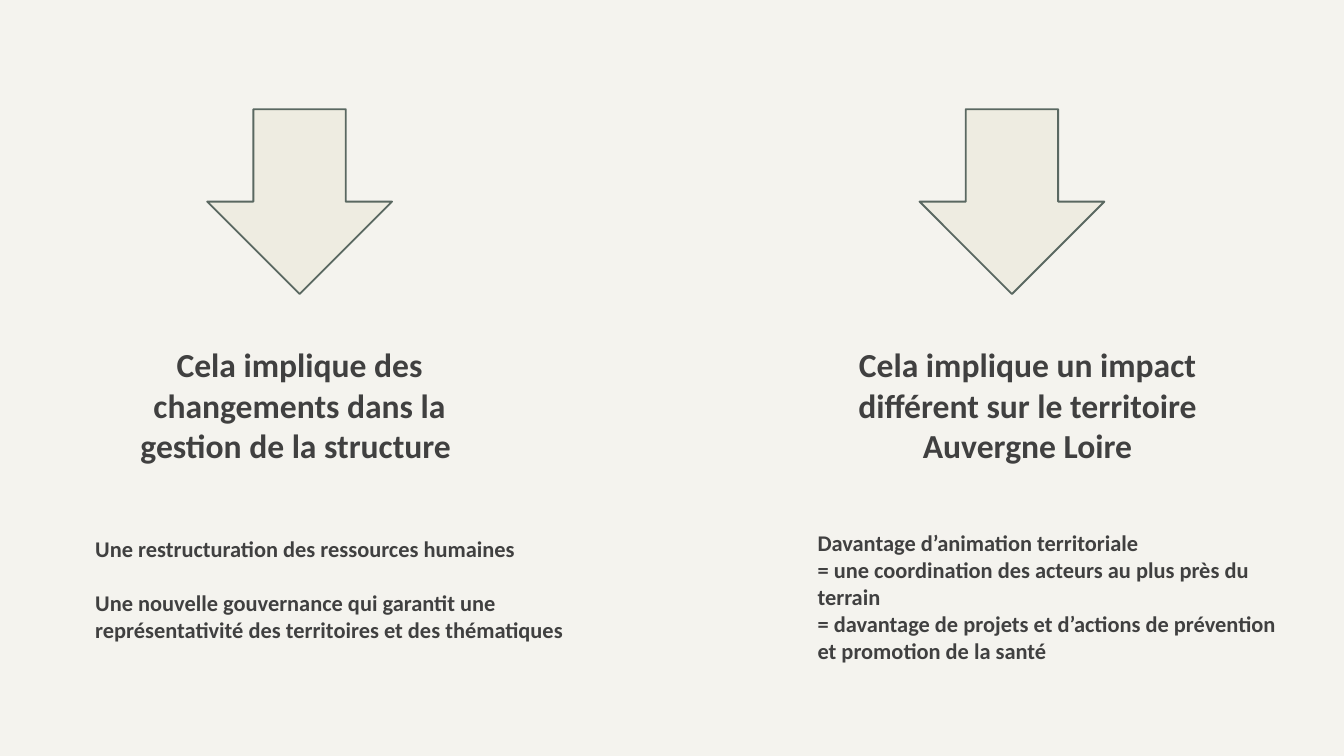
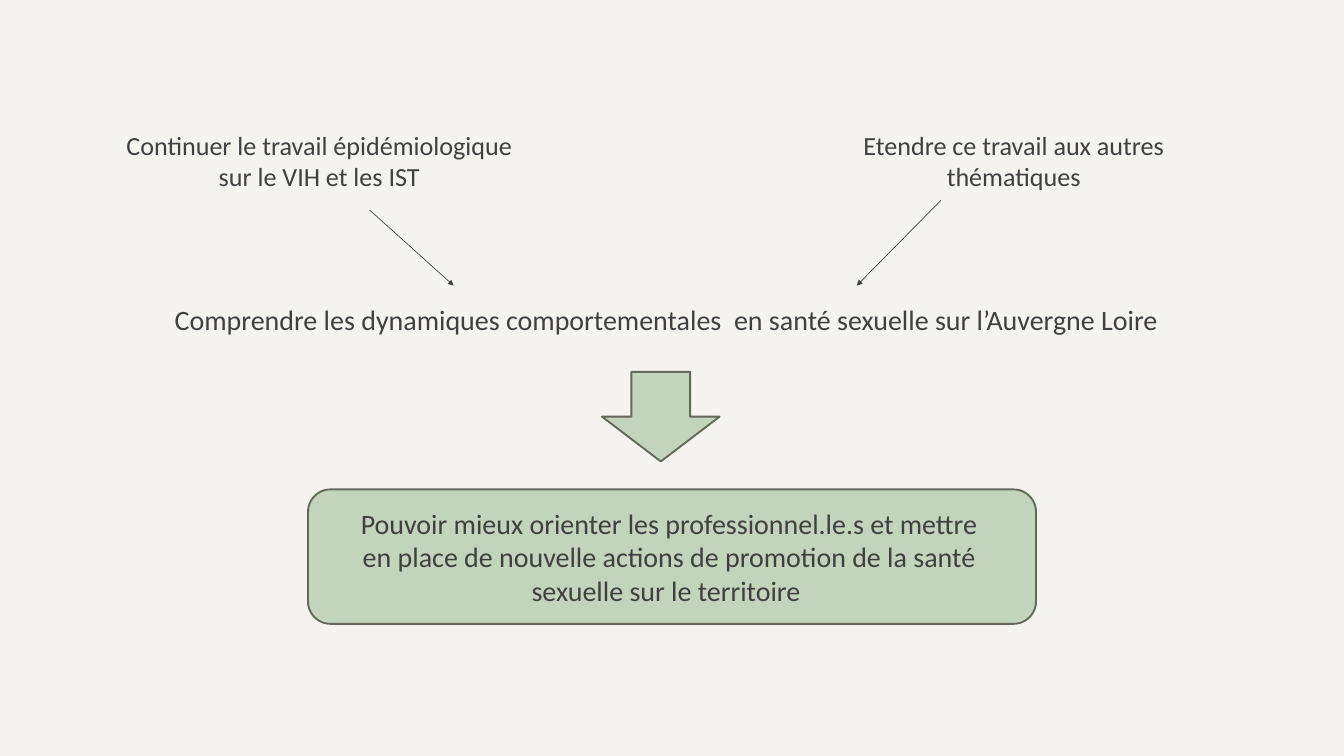
"""Build two slides on the consequences and aims of the work in Auvergne Loire."""
from lxml.etree import SubElement
from pptx import Presentation
from pptx.dml.color import RGBColor
from pptx.enum.shapes import MSO_CONNECTOR, MSO_SHAPE
from pptx.enum.text import MSO_ANCHOR, MSO_AUTO_SIZE, PP_ALIGN
from pptx.oxml.ns import qn
from pptx.util import Inches, Pt

PAPER = RGBColor(0xF4, 0xF3, 0xEE)
CREAM = RGBColor(0xEE, 0xEC, 0xE1)
SLATE = RGBColor(0x5A, 0x68, 0x61)
GREEN = RGBColor(0xC2, 0xD4, 0xBB)
OLIVE = RGBColor(0x64, 0x68, 0x5A)
INK = RGBColor(0x40, 0x40, 0x40)
FONT = "Calibri"

WIDTH, HEIGHT = Inches(20), Inches(11.25)
COLUMNS, ROWS = 240, 135
INSET = 1.2
INDENT = 6


def col(n):
    """Return the length of n grid columns."""
    return round(WIDTH * n / COLUMNS)


def row(n):
    """Return the length of n grid rows."""
    return round(HEIGHT * n / ROWS)


def grid_box(x, y, w, h):
    """Convert a box in columns and rows to slide lengths."""
    return col(x), row(y), col(w), row(h)


def add_block(slide, kind, box, fill, outline):
    """Add a filled preset shape with a two-point outline."""
    sp = slide.shapes.add_shape(kind, *grid_box(*box))
    sp.shadow.inherit = False
    sp.fill.solid()
    sp.fill.fore_color.rgb = fill
    sp.line.color.rgb = outline
    sp.line.width = Pt(2)


def add_text(slide, box, lines, size, bold=False, align=PP_ALIGN.CENTER,
             inset=INSET, indent=0, gap=0):
    """Add a text box with one paragraph per line and a gap between them."""
    tf = slide.shapes.add_textbox(*grid_box(*box)).text_frame
    tf.word_wrap = True
    tf.auto_size = MSO_AUTO_SIZE.SHAPE_TO_FIT_TEXT
    tf.vertical_anchor = MSO_ANCHOR.TOP
    tf.margin_left, tf.margin_right = col(inset + indent), col(inset)
    tf.margin_top = tf.margin_bottom = row(inset / 2)
    for i, line in enumerate(lines):
        p = tf.add_paragraph() if i else tf.paragraphs[0]
        p.alignment = align
        p.space_before = Pt(gap if i else 0)
        r = p.add_run()
        r.text = line
        r.font.name = FONT
        r.font.size = Pt(size)
        r.font.bold = bold
        r.font.color.rgb = INK


def add_arrow(slide, start, end):
    """Add a thin straight arrow between two grid points."""
    cx = slide.shapes.add_connector(
        MSO_CONNECTOR.STRAIGHT, col(start[0]), row(start[1]), col(end[0]), row(end[1]))
    cx.line.color.rgb = INK
    cx.line.width = Pt(0.75)
    SubElement(cx.line._get_or_add_ln(), qn("a:tailEnd"), type="triangle")
    SubElement(cx._element.spPr, qn("a:effectLst"))


def add_consequence(slide, arrow_x, heading_x, heading, detail_box, details, gap=0):
    """Add a column made of a block arrow, a heading and its details."""
    add_block(slide, MSO_SHAPE.DOWN_ARROW, (arrow_x, 19.5, 33, 33), CREAM, SLATE)
    add_text(slide, (heading_x, 61.5, 66.6, 21.8), [heading], 36, bold=True, inset=0)
    add_text(slide, detail_box, details, 24, bold=True, align=PP_ALIGN.LEFT,
             inset=0, gap=gap)


def build_consequences(slide):
    """Fill the slide on what the change implies."""
    add_consequence(
        slide, 37, 20.2, "Cela implique des changements dans la gestion de la structure ",
        (17, 95.5, 85, 19.5),
        ["Une restructuration des ressources humaines",
         "Une nouvelle gouvernance qui garantit une représentativité des territoires "
         "et des thématiques"], gap=29)
    add_consequence(
        slide, 164.2, 150.2,
        "Cela implique un impact différent sur le territoire Auvergne Loire",
        (146, 94.5, 85, 24.3),
        ["Davantage d’animation territoriale",
         "= une coordination des acteurs au plus près du terrain",
         "= davantage de projets et d’actions de prévention et promotion de la santé"])


def build_aims(slide):
    """Fill the slide on the lines of work and their shared aim."""
    add_block(slide, MSO_SHAPE.ROUNDED_RECTANGLE, (55, 87.4, 130, 24), GREEN, OLIVE)
    add_text(slide, (18, 22.5, 78, 12.5),
             ["Continuer le travail épidémiologique sur le VIH et les IST"], 28)
    add_text(slide, (146, 22.5, 64, 12.5),
             ["Etendre ce travail aux autres thématiques"], 28, indent=INDENT)
    add_arrow(slide, (66, 37.5), (81, 51))
    add_text(slide, (24, 53.4, 188, 7.3),
             ["Comprendre les dynamiques comportementales  en santé sexuelle "
              "sur l’Auvergne Loire"], 30, align=PP_ALIGN.LEFT, indent=INDENT)
    add_block(slide, MSO_SHAPE.DOWN_ARROW, (107.5, 66.4, 21, 16), GREEN, OLIVE)
    add_text(slide, (55, 89.8, 123, 19.5),
             ["Pouvoir mieux orienter les professionnel.le.s et mettre en place de "
              "nouvelle actions de promotion de la santé sexuelle sur le territoire "],
             30, indent=INDENT)
    add_arrow(slide, (168, 35.8), (153, 51))


def main():
    """Build and save the presentation."""
    prs = Presentation()
    prs.slide_width, prs.slide_height = WIDTH, HEIGHT
    background = prs.slide_master.background.fill
    background.solid()
    background.fore_color.rgb = PAPER
    blank = prs.slide_layouts[6]
    for build in (build_consequences, build_aims):
        build(prs.slides.add_slide(blank))
    prs.save("out.pptx")


if __name__ == "__main__":
    main()
